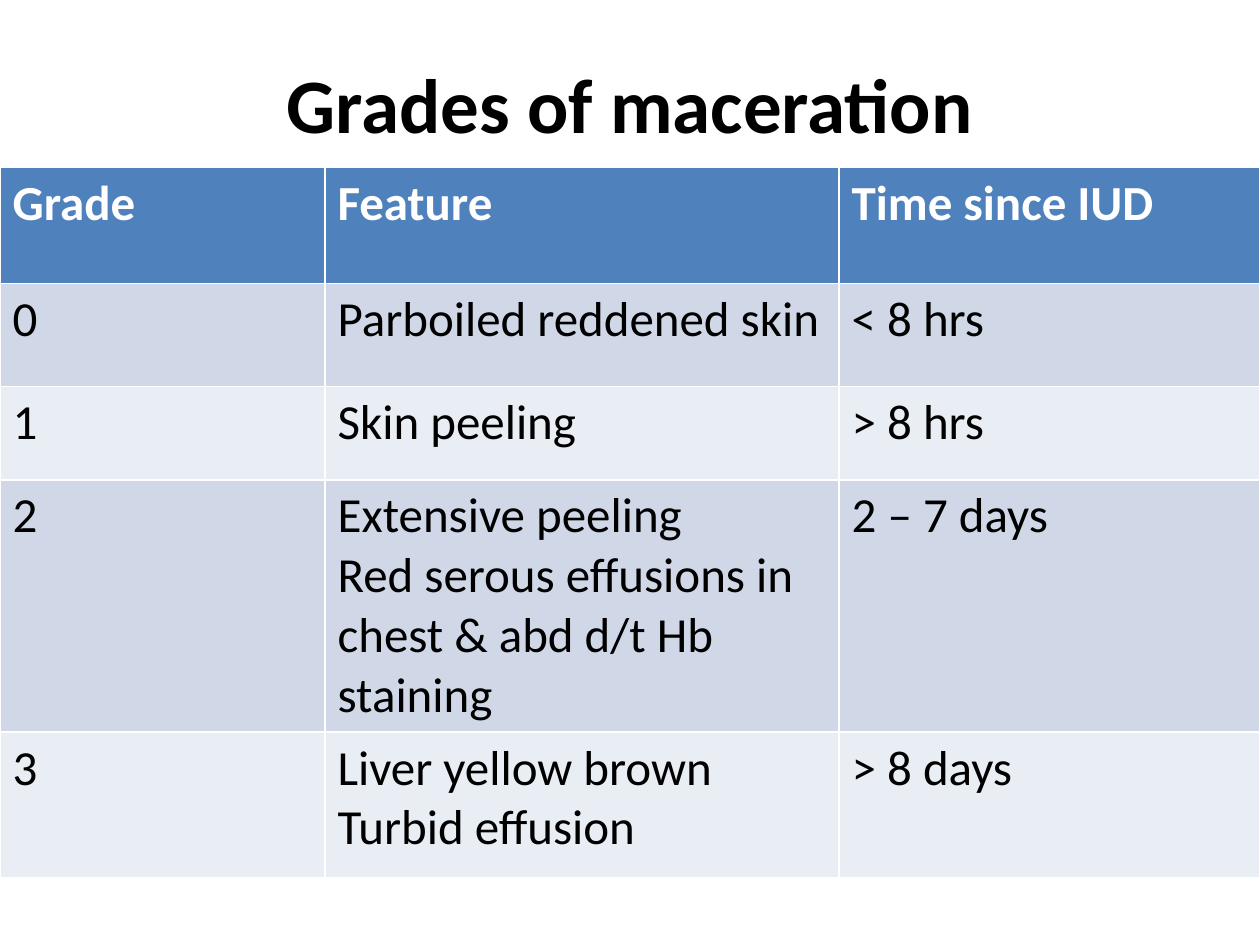
"""Build a slide with a table of the grades of maceration."""
from dataclasses import dataclass

from pptx import Presentation
from pptx.dml.color import RGBColor
from pptx.enum import text
from pptx.util import Inches, Pt

COLORS = {
    "header": "4F81BD",
    "odd": "D0D8E8",
    "even": "E9EDF4",
    "light": "FFFFFF",
    "dark": "000000",
}
FONT = "Calibri"
COLUMN_WIDTHS = (2.58, 4.08, 3.34)


@dataclass(frozen=True)
class GradeRow:
    grade: str
    feature: str
    time: str
    height: float


ROWS = (
    GradeRow("Grade", "Feature", "Time since IUD", 0.92),
    GradeRow("0", "Parboiled reddened skin", "< 8 hrs", 0.82),
    GradeRow("1", "Skin peeling", "> 8 hrs", 0.74),
    GradeRow("2", "Extensive peeling\nRed serous effusions in chest & abd d/t Hb staining",
             "2 – 7 days", 1.99),
    GradeRow("3", "Liver yellow brown\nTurbid effusion", "> 8 days", 1.16),
)


def style_paragraphs(frame, size: float, color: str, bold: bool) -> None:
    """Give every paragraph in a text frame the same font."""
    for paragraph in frame.paragraphs:
        font = paragraph.font
        font.name, font.size, font.bold = FONT, Pt(size), bold
        font.color.rgb = RGBColor.from_string(COLORS[color])


def add_title(slide, wording: str) -> None:
    """Fill and place the title placeholder."""
    title = slide.shapes.title
    title.left, title.top = Inches(0.5), Inches(0.3)
    title.width, title.height = Inches(9), Inches(1.03)
    frame = title.text_frame
    frame.text = wording
    frame.vertical_anchor = text.MSO_ANCHOR.MIDDLE
    frame.paragraphs[0].alignment = text.PP_ALIGN.CENTER
    style_paragraphs(frame, 44, "dark", True)


def add_grades(slide, rows: tuple[GradeRow, ...]) -> None:
    """Draw the grades table with a header and banded rows."""
    grades = slide.shapes.add_table(
        len(rows), len(COLUMN_WIDTHS), Inches(0), Inches(1.33),
        Inches(sum(COLUMN_WIDTHS)), Inches(sum(row.height for row in rows)),
    ).table
    for column, width in zip(grades.columns, COLUMN_WIDTHS):
        column.width = Inches(width)
    for index, row in enumerate(rows):
        grades.rows[index].height = Inches(row.height)
        is_header = index == 0
        band = "header" if is_header else "odd" if index % 2 else "even"
        for cell, wording in zip(grades.rows[index].cells, (row.grade, row.feature, row.time)):
            cell.text = wording
            cell.fill.solid()
            cell.fill.fore_color.rgb = RGBColor.from_string(COLORS[band])
            style_paragraphs(cell.text_frame, 28, "light" if is_header else "dark", is_header)


def main() -> None:
    """Create and save the presentation."""
    deck = Presentation()
    deck.slide_width, deck.slide_height = Inches(10), Inches(7.5)
    slide = deck.slides.add_slide(deck.slide_layouts[5])
    add_title(slide, "Grades of maceration")
    add_grades(slide, ROWS)
    deck.save("out.pptx")


if __name__ == "__main__":
    main()
